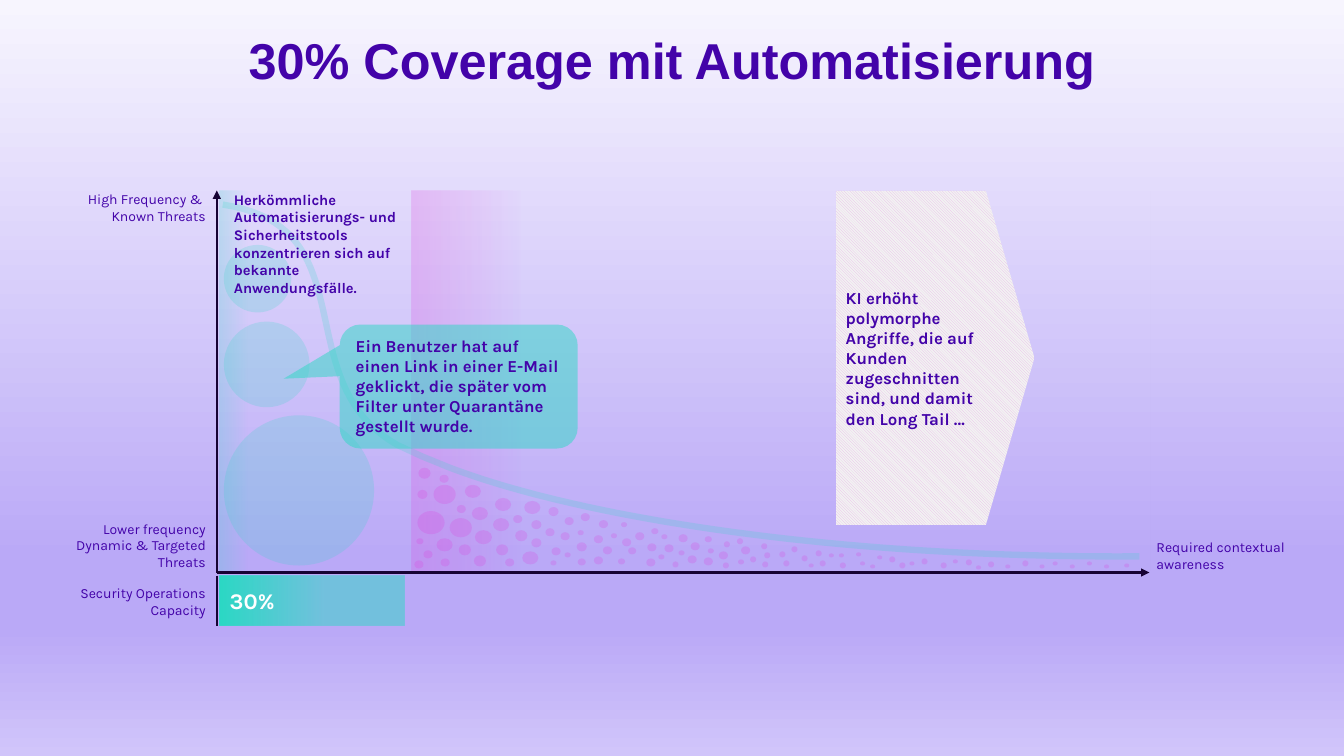
from lxml.etree import SubElement
from pptx import Presentation
from pptx.dml.color import RGBColor
from pptx.enum.dml import MSO_PATTERN
from pptx.enum.shapes import MSO_CONNECTOR, MSO_SHAPE
from pptx.enum.text import MSO_ANCHOR, MSO_AUTO_SIZE, PP_ALIGN
from pptx.oxml.ns import qn
from pptx.util import Inches, Pt

COLORS = {
    "text": "4303A9", "axis": "170334", "teal": "2CD9C5", "pink": "DF34DA",
    "white": "FFFFFF", "stripe": "E8B6E8", "stripe_back": "F2F2F2",
    "sky": "F7F5FE", "violet": "BAA9F7", "lilac": "D1C5FA",
}
LABEL_X, LABEL_W = 0.7, 1.34
AXIS_X, AXIS_TOP, AXIS_Y, AXIS_END = 2.15, 1.89, 5.68, 11.4

# Left and top of each rare threat, by width and height of its dot
THREAT_DOTS = {
    (0.27, 0.23): [(4.14, 5.07)],
    (0.22, 0.19): [(4.3, 4.81), (4.46, 5.14)],
    (0.17, 0.14): [(4.71, 5.26)],
    (0.16, 0.13): [(4.91, 4.94), (4.33, 5.34), (4.61, 4.81), (4.68, 5.03),
                   (4.89, 5.14), (5.2, 4.97), (5.18, 5.47)],
    (0.12, 0.11): [(4.92, 5.4), (5.11, 5.26), (4.7, 5.51), (4.55, 5.4), (4.15, 4.64)],
    (0.1, 0.09): [(4.14, 4.86), (5.27, 5.16), (5.27, 5.34), (5.44, 5.03), (5.72, 5.38)],
    (0.09, 0.08): [
        (5.6, 5.13), (5.94, 5.16), (5.89, 5.31), (5.56, 5.28), (5.47, 5.43),
        (5.89, 5.52), (5.98, 5.42), (5.09, 5.11), (4.53, 5.01), (4.36, 4.71),
        (4.2, 5.46), (4.37, 5.54), (4.11, 5.56), (5.01, 5.54), (5.41, 5.24),
        (5.76, 5.09), (6.41, 5.54), (6.59, 5.4), (6.3, 5.28), (6.42, 5.39),
        (6.73, 5.3), (6.98, 5.53), (6.82, 5.51), (6.85, 5.38), (7.13, 5.47),
        (7.35, 5.42), (6.17, 5.34)],
    (0.08, 0.07): [(6.23, 5.43), (5.73, 5.54)],
    (0.07, 0.06): [(4.13, 5.34), (6.13, 5.54), (6.46, 5.24), (6.99, 5.32)],
    (0.06, 0.05): [
        (6.06, 5.29), (5.6, 5.48), (5.73, 5.26), (6.16, 5.18), (6.56, 5.3),
        (6.53, 5.5), (5.46, 5.56), (6.73, 5.46), (7.02, 5.44), (7.32, 5.55)],
    (0.06, 0.06): [
        (7.18, 5.37), (7.56, 5.57), (6.67, 5.57), (7.55, 5.39), (7.73, 5.47),
        (7.95, 5.51), (7.77, 5.56), (7.85, 5.42), (7.58, 5.48), (7.17, 5.58),
        (7.31, 5.34), (7.44, 5.52), (8.09, 5.46), (8.13, 5.56), (8.33, 5.58),
        (8.82, 5.52), (8.92, 5.58), (9.14, 5.54), (9.33, 5.58), (9.58, 5.55),
        (9.8, 5.57), (10.14, 5.56)],
    (0.05, 0.04): [
        (8.32, 5.49), (8.49, 5.48), (8.7, 5.51), (8.53, 5.57), (8.02, 5.59),
        (8.22, 5.49), (8.63, 5.6), (9.02, 5.57), (9.45, 5.55), (9.97, 5.6),
        (10.31, 5.6), (10.44, 5.57), (11.15, 5.59), (10.78, 5.57), (10.95, 5.6),
        (10.61, 5.6), (9.68, 5.61)],
}
KNOWN_THREATS = [(2.43, 0.67), (3.19, 0.85), (4.12, 1.49)]  # top, diameter
LONG_TAIL = [
    [(11.3, 5.52), (8.34, 5.54), (5.8, 5.15), (4.46, 4.64)],
    [(4.19, 4.53), (4.1, 4.49), (4.02, 4.45), (3.95, 4.42)],
    [(3.95, 4.42), (2.82, 3.79), (3.67, 2.25), (2.21, 2.03)],
]


def rgb(name):
    return RGBColor.from_string(COLORS[name])


def set_alpha(element, percent):
    for clr in element.iter(qn("a:srgbClr")):
        SubElement(clr, qn("a:alpha"), val=str(percent * 1000))


def set_gradient(fill, element, stops, angle=0):
    """Fill with stops of (position, colour, opacity), all but colour in percent."""
    fill.gradient()
    fill.gradient_angle = angle
    gs_list = next(element.iter(qn("a:gsLst")))
    for gs in list(gs_list):
        gs_list.remove(gs)
    for pos, color, alpha in stops:
        gs = SubElement(gs_list, qn("a:gs"), pos=str(pos * 1000))
        clr = SubElement(gs, qn("a:srgbClr"), val=COLORS[color])
        SubElement(clr, qn("a:alpha"), val=str(alpha * 1000))


def write(tf, *lines, size=10, bold=False, color="text", font="Karla", inset=True,
          align=PP_ALIGN.LEFT, anchor=MSO_ANCHOR.TOP, grow=False, spacing=None):
    tf.word_wrap = True
    tf.auto_size = MSO_AUTO_SIZE.SHAPE_TO_FIT_TEXT if grow else MSO_AUTO_SIZE.NONE
    tf.vertical_anchor = anchor
    if not inset:
        tf.margin_left = tf.margin_right = tf.margin_top = tf.margin_bottom = 0
    for i, line in enumerate(lines):
        p = tf.add_paragraph() if i else tf.paragraphs[0]
        p.alignment = align
        if spacing:
            p.line_spacing = spacing
        r = p.add_run()
        r.text = line
        r.font.name, r.font.size, r.font.bold = font, Pt(size), bold
        r.font.color.rgb = rgb(color)


def bezier(p0, p1, p2, p3, steps=40):
    for i in range(steps + 1):
        t = i / steps
        u = 1 - t
        yield tuple(Inches(u**3 * a + 3 * u * u * t * b + 3 * u * t * t * c + t**3 * d)
                    for a, b, c, d in zip(p0, p1, p2, p3))


class ThreatSlide:
    def __init__(self, prs):
        self.slide = prs.slides.add_slide(prs.slide_layouts[5])
        self.shapes = self.slide.shapes
        set_gradient(self.slide.background.fill, self.slide.background._cSld, [
            (0, "sky", 100), (74, "violet", 100), (83, "violet", 100),
            (100, "lilac", 100)], angle=270)

    def title(self, text):
        sp = self.shapes.title
        sp.left, sp.top, sp.width, sp.height = map(Inches, (0, 0.4, 13.33, 0.55))
        write(sp.text_frame, text, size=36, bold=True, font="Arial", inset=False,
              align=PP_ALIGN.CENTER, spacing=0.8)

    def shape(self, kind, *box, color=None, alpha=100, stops=None, adj=(), parent=None):
        sp = (parent or self).shapes.add_shape(kind, *map(Inches, box))
        sp.shadow.inherit = False
        sp.line.fill.background()
        for i, value in enumerate(adj):
            sp.adjustments[i] = value
        if stops:
            set_gradient(sp.fill, sp._element.spPr, stops)
        elif color:
            sp.fill.solid()
            sp.fill.fore_color.rgb = rgb(color)
            set_alpha(sp._element.spPr, alpha)
        return sp

    def label(self, x, y, w, h, *lines, **fmt):
        sp = self.shapes.add_textbox(*map(Inches, (x, y, w, h)))
        write(sp.text_frame, *lines, inset=False, grow=True, **fmt)

    def line(self, x1, y1, x2, y2, arrow=False):
        """Straight line, with the arrowhead at its first point."""
        cn = self.shapes.add_connector(MSO_CONNECTOR.STRAIGHT, *map(Inches, (x1, y1, x2, y2)))
        cn.line.color.rgb = rgb("axis")
        cn.line.width = Pt(1.5)
        if arrow:
            SubElement(cn.line._get_or_add_ln(), qn("a:headEnd"), type="triangle")
        SubElement(cn._element.spPr, qn("a:effectLst"))

    def curve(self, segments):
        points = [pt for seg in segments for pt in bezier(*seg)]
        builder = self.shapes.build_freeform(*points[0], scale=1.0)
        builder.add_line_segments(points[1:], close=False)
        sp = builder.convert_to_shape()
        sp.shadow.inherit = False
        sp.fill.background()
        sp.line.color.rgb = rgb("teal")
        sp.line.width = Pt(4.5)
        set_alpha(sp._element.spPr, 20)


def main():
    prs = Presentation()
    prs.slide_width, prs.slide_height = Inches(13.33), Inches(7.5)
    s = ThreatSlide(prs)
    s.title("30% Coverage mit Automatisierung")

    s.shape(MSO_SHAPE.RECTANGLE, 4.08, AXIS_TOP, 7.33, 3.77,
            stops=[(0, "pink", 20), (15, "pink", 0)])
    dots = s.shapes.add_group_shape()
    for (w, h), places in THREAT_DOTS.items():
        for x, y in places:
            s.shape(MSO_SHAPE.OVAL, x, y, w, h, color="pink", alpha=20, parent=dots)
    s.shape(MSO_SHAPE.RECTANGLE, 2.18, AXIS_TOP, 1.87, 3.79,
            stops=[(0, "teal", 20), (15, "teal", 0)])
    s.curve(LONG_TAIL)

    right = PP_ALIGN.RIGHT
    s.label(LABEL_X, AXIS_TOP, LABEL_W, 0.34, "High Frequency & ", "Known Threats", align=right)
    s.label(11.47, 5.34, 1.32, 0.34, "Required contextual awareness", anchor=MSO_ANCHOR.MIDDLE)
    s.label(LABEL_X, 5.16, LABEL_W, 0.5, "Lower frequency", "Dynamic & Targeted Threats",
            align=right, anchor=MSO_ANCHOR.BOTTOM)
    s.line(AXIS_X, AXIS_TOP, AXIS_X, AXIS_Y, arrow=True)
    s.line(AXIS_END, AXIS_Y, AXIS_X, AXIS_Y, arrow=True)

    circles = s.shapes.add_group_shape()
    for y, size in KNOWN_THREATS:
        s.shape(MSO_SHAPE.OVAL, 2.22, y, size, size, color="teal", alpha=20, parent=circles)
    s.label(2.32, AXIS_TOP, 1.69, 1.06,
            "Herkömmliche Automatisierungs- und Sicherheitstools konzentrieren sich auf "
            "bekannte Anwendungsfälle.", size=10.5, bold=True)

    capacity = s.shape(MSO_SHAPE.RECTANGLE, 2.18, 5.71, 1.83, 0.5,
                       stops=[(0, "teal", 100), (56, "teal", 50)])
    write(capacity.text_frame, "30%", size=16, bold=True, color="white",
          anchor=MSO_ANCHOR.MIDDLE)
    s.label(LABEL_X, 5.8, LABEL_W, 0.34, "Security Operations Capacity",
            align=right, anchor=MSO_ANCHOR.MIDDLE)
    s.line(AXIS_X, 5.71, AXIS_X, 6.21)

    callout = s.shape(MSO_SHAPE.ROUNDED_RECTANGULAR_CALLOUT, 3.37, 3.22, 2.36, 1.23,
                      color="teal", alpha=50, adj=(-0.736, -0.063, 0.167))
    write(callout.text_frame, "Ein Benutzer hat auf einen Link in einer E-Mail geklickt, "
          "die später vom Filter unter Quarantäne gestellt wurde.", size=12, bold=True, grow=True)

    ai = s.shape(MSO_SHAPE.PENTAGON, 8.29, AXIS_TOP, 1.97, 3.32, adj=(0.245,))
    ai.fill.patterned()
    ai.fill.pattern = MSO_PATTERN.DARK_DOWNWARD_DIAGONAL
    ai.fill.fore_color.rgb = rgb("stripe")
    ai.fill.back_color.rgb = rgb("stripe_back")
    write(ai.text_frame, "KI erhöht polymorphe Angriffe, die auf Kunden zugeschnitten sind, "
          "und damit den Long Tail …", size=12, bold=True, anchor=MSO_ANCHOR.MIDDLE)

    prs.save("out.pptx")


if __name__ == "__main__":
    main()
